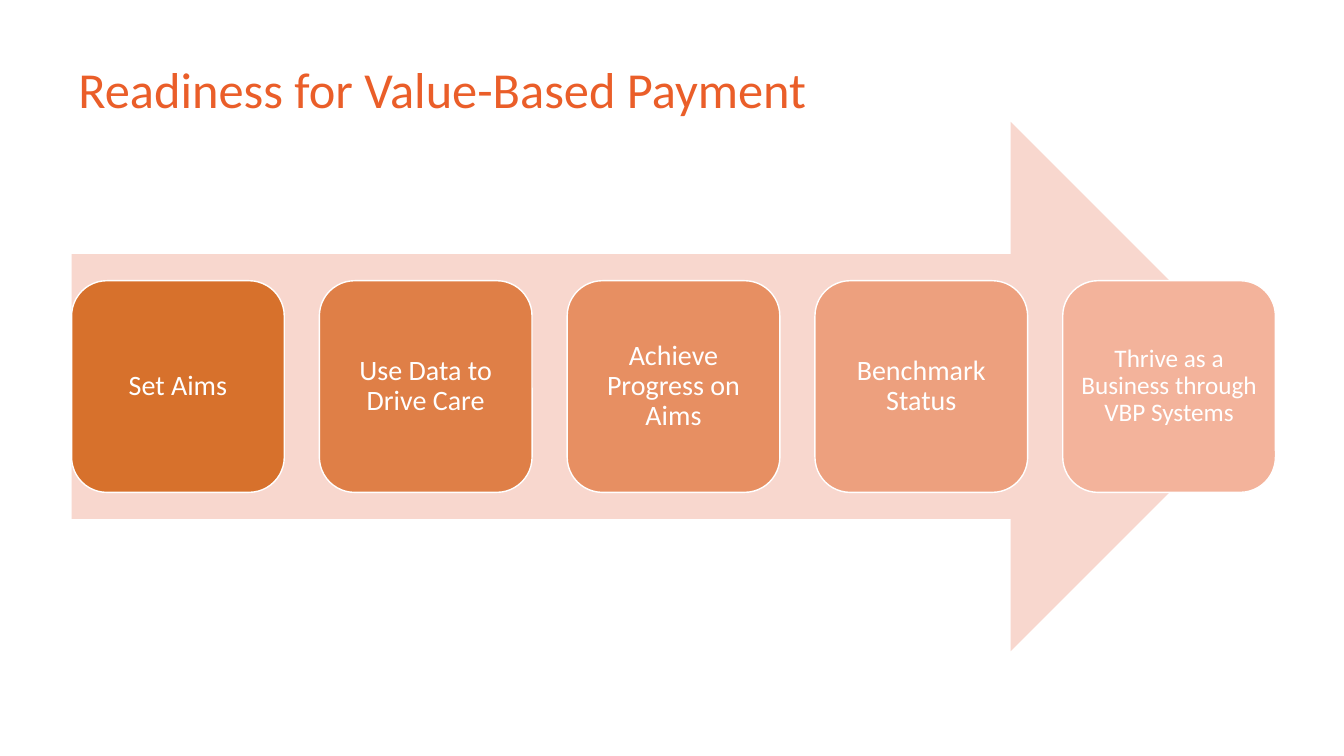
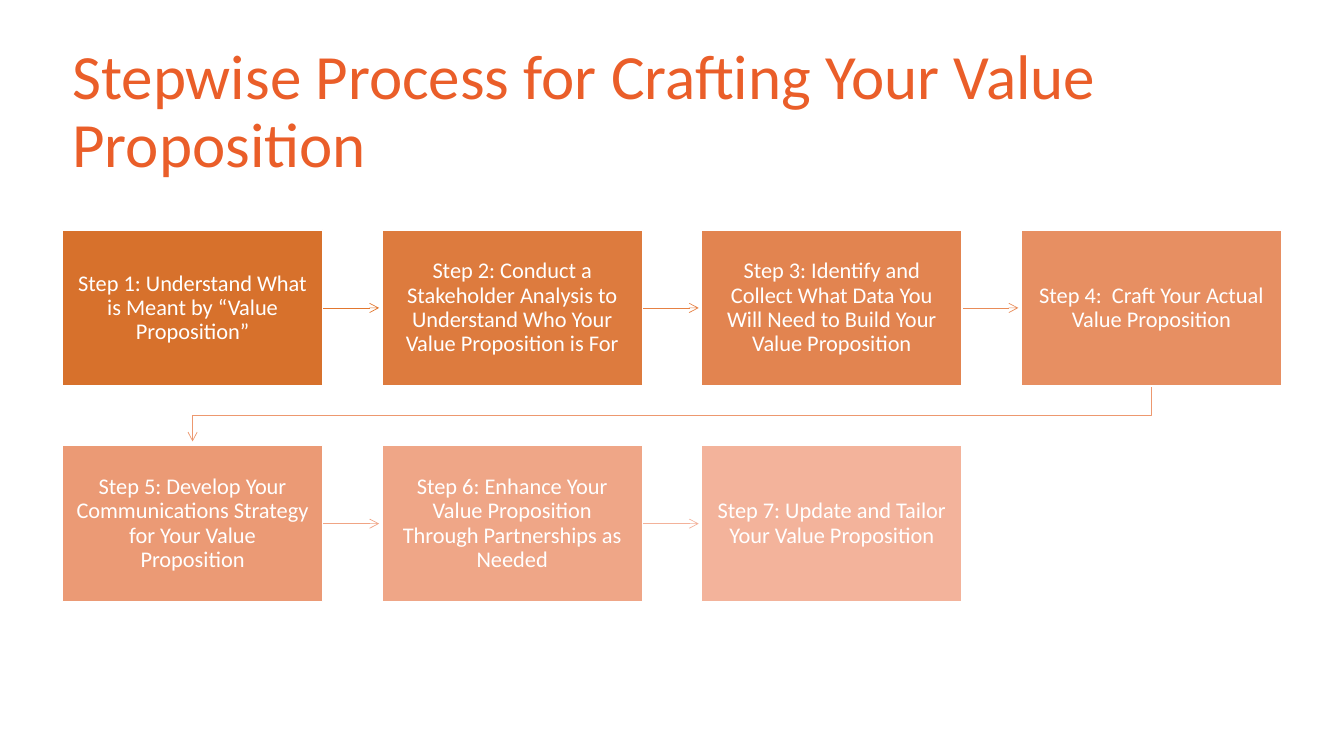
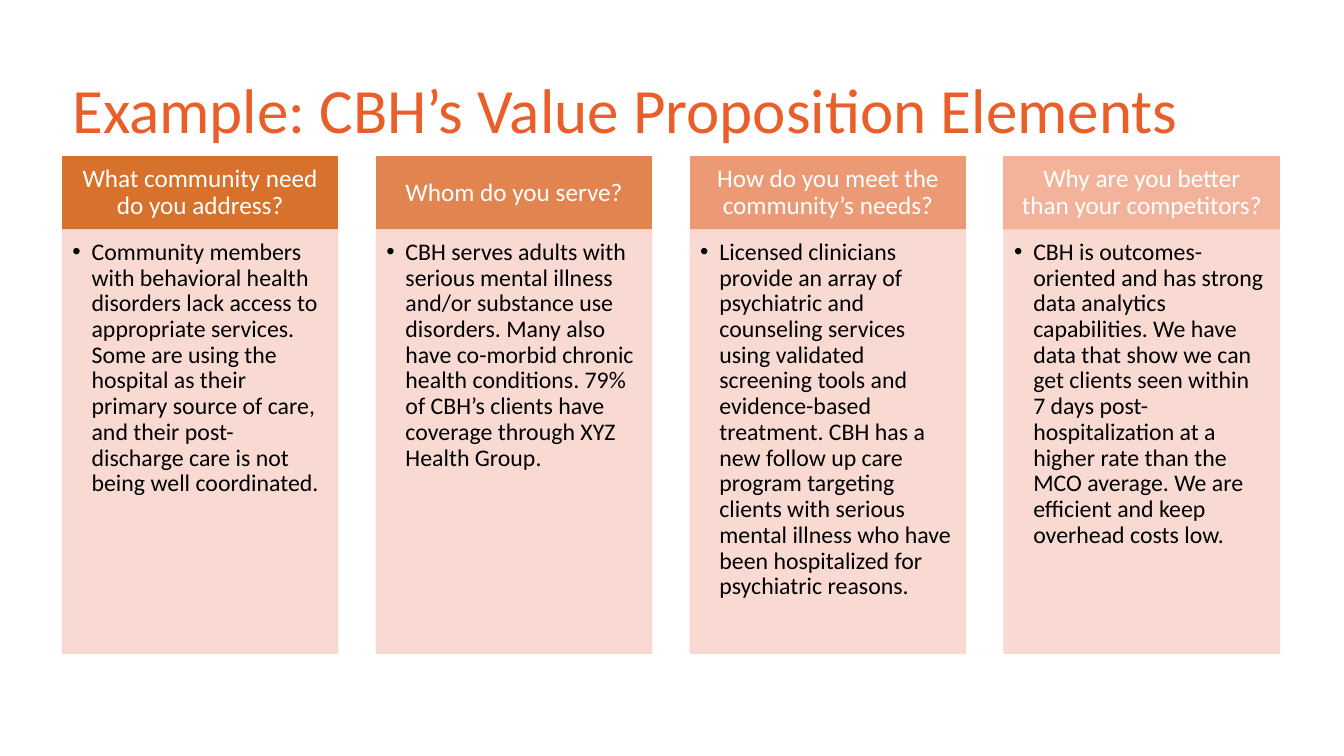
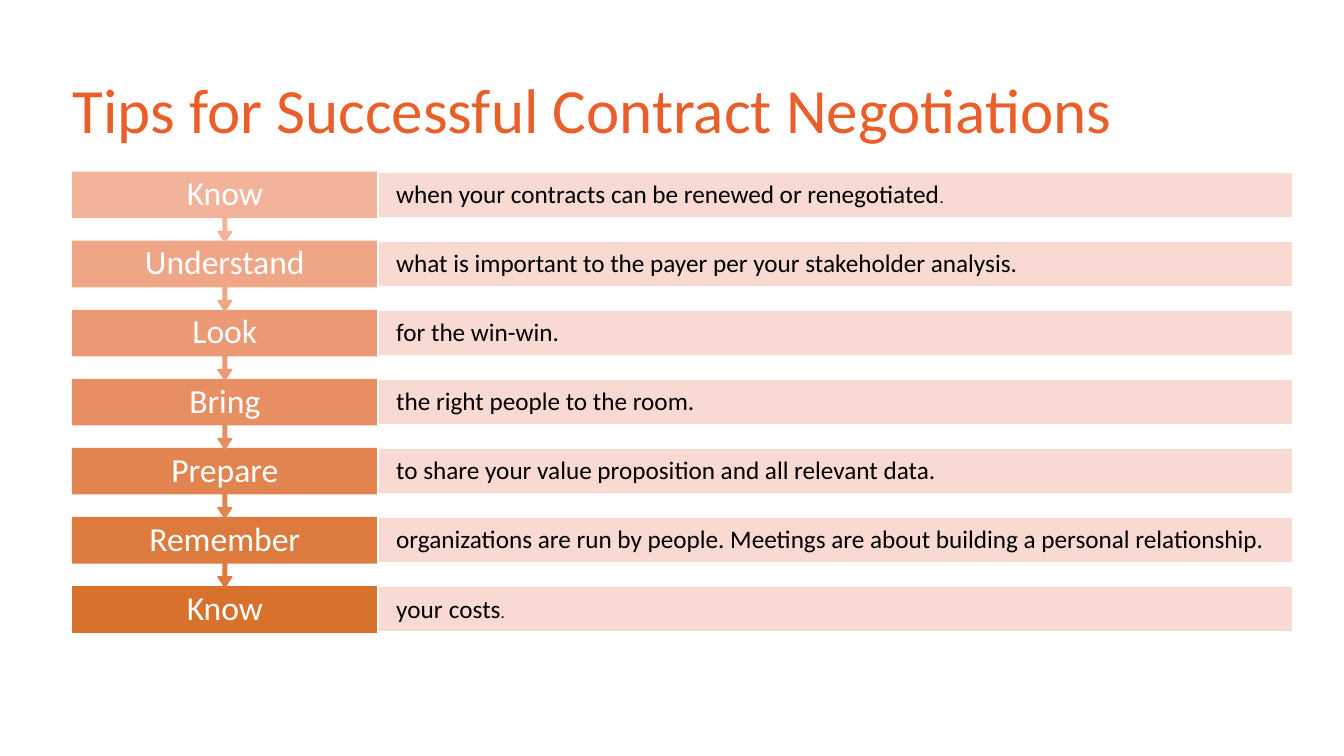
import pptx
import pptx.util
import pptx.dml.color
import pptx.enum.shapes
import pptx.enum.text
import pptx.oxml.ns
import lxml.etree

Inches = pptx.util.Inches
SHAPE = pptx.enum.shapes.MSO_SHAPE
ALIGN = pptx.enum.text.PP_ALIGN
ANCHOR = pptx.enum.text.MSO_ANCHOR

FONT = "Calibri"
COLORS = {
    "title": "EA5E29",
    "white": "FFFFFF",
    "black": "000000",
    "pale": "F8D7CE",
}
SHADES = {
    4: ["D7712C", "E28450", "EB9A75", "F3B39B"],
    5: ["D7712C", "DF7F47", "E78F62", "EDA07E", "F3B39B"],
    7: ["D7712C", "DD7B3E", "E28450", "E78F62", "EB9A75", "EFA687", "F3B39B"],
}
ARROW_SHADES = ["E2772F", "E68144", "E98C59", "ED986F", "F0A484", "F3B29A"]
TITLE_BOX = (0.62, 0.4, 12.1, 1.45)

AIMS = [
    ("Set Aims", 20, 0.08),
    ("Use Data to Drive Care", 20, 0.08),
    ("Achieve Progress on Aims", 20, 0.08),
    ("Benchmark Status", 20, 0.08),
    ("Thrive as a Business through VBP Systems", 18, 0.07),
]
STEPS = [
    "Step 1: Understand What is Meant by “Value Proposition”",
    "Step 2: Conduct a Stakeholder Analysis to Understand Who Your Value Proposition is For",
    "Step 3: Identify and Collect What Data You Will Need to Build Your Value Proposition",
    "Step 4:  Craft Your Actual Value Proposition",
    "Step 5: Develop Your Communications Strategy for Your Value Proposition",
    "Step 6: Enhance Your Value Proposition Through Partnerships as Needed",
    "Step 7: Update and Tailor Your Value Proposition",
]
ELEMENTS = [
    ("What community need do you address?",
     "Community members with behavioral health disorders lack access to appropriate services. "
     "Some are using the hospital as their primary source of care, and their post-discharge "
     "care is not being well coordinated."),
    ("Whom do you serve?",
     "CBH serves adults with serious mental illness and/or substance use disorders. Many also "
     "have co-morbid chronic health conditions. 79% of CBH’s clients have coverage through "
     "XYZ Health Group."),
    ("How do you meet the community’s needs?",
     "Licensed clinicians provide an array of psychiatric and counseling services using "
     "validated screening tools and evidence-based treatment. CBH has a new follow up care "
     "program targeting clients with serious mental illness who have been hospitalized for "
     "psychiatric reasons."),
    ("Why are you better than your competitors?",
     "CBH is outcomes-oriented and has strong data analytics capabilities. We have data that "
     "show we can get clients seen within 7 days post-hospitalization at a higher rate than "
     "the MCO average. We are efficient and keep overhead costs low."),
]
TIPS = [
    ("Know", [("when your contracts can be renewed or renegotiated", 18), (".", 12)]),
    ("Understand", "what is important to the payer per your stakeholder analysis."),
    ("Look", "for the win-win."),
    ("Bring", "the right people to the room."),
    ("Prepare", "to share your value proposition and all relevant data."),
    ("Remember", "organizations are run by people. Meetings are about building a personal relationship."),
    ("Know", [("your", 18), (" ", 20), ("costs", 18), (".", 12)]),
]


def rgb(color):
    return pptx.dml.color.RGBColor.from_string(color)


def add_child(parent, tag, **attributes):
    return lxml.etree.SubElement(parent, pptx.oxml.ns.qn(tag), **attributes)


def write(holder, text, size=18, color=COLORS["white"], align=ALIGN.CENTER,
          anchor=ANCHOR.MIDDLE, insets=(0.1, 0.05, 0.1, 0.05), bullet=False):
    frame = holder.text_frame
    frame.word_wrap = True
    frame.vertical_anchor = anchor
    (frame.margin_left, frame.margin_top,
     frame.margin_right, frame.margin_bottom) = map(Inches, insets)
    paragraph = frame.paragraphs[0]
    paragraph.alignment = align
    paragraph.line_spacing = 0.9
    if bullet:
        properties = paragraph._p.get_or_add_pPr()
        properties.set("marL", str(Inches(0.19)))
        properties.set("indent", str(Inches(-0.19)))
        add_child(properties, "a:buFont", typeface="Arial")
        add_child(properties, "a:buChar", char="•")
    for words, points in [(text, size)] if isinstance(text, str) else text:
        run = paragraph.add_run()
        run.text = words
        run.font.name = FONT
        run.font.size = pptx.util.Pt(points)
        run.font.color.rgb = rgb(color)


def add_block(slide, preset, box, fill, line=None, opacity=None):
    block = slide.shapes.add_shape(preset, *map(Inches, box))
    block.shadow.inherit = False
    block.fill.solid()
    block.fill.fore_color.rgb = rgb(fill)
    if line:
        block.line.color.rgb = rgb(line)
        block.line.width = pptx.util.Pt(1)
    else:
        block.line.fill.background()
    if opacity:
        for tint in block._element.spPr.iter(pptx.oxml.ns.qn("a:srgbClr")):
            if tint.get("val") == fill:
                add_child(tint, "a:alpha", val=str(opacity * 1000))
    return block


def add_title(slide, text, box=TITLE_BOX, size=45):
    title = slide.shapes.add_textbox(*map(Inches, box))
    write(title, text, size=size, color=COLORS["title"], align=ALIGN.LEFT)


def style_arrow(arrow, color):
    arrow.line.color.rgb = rgb(color)
    arrow.line.width = pptx.util.Pt(0.5)
    add_child(arrow.line._get_or_add_ln(), "a:tailEnd", type="arrow")


def add_step_arrow(slide, start, end, color):
    arrow = slide.shapes.add_connector(
        pptx.enum.shapes.MSO_CONNECTOR.STRAIGHT, *map(Inches, start + end))
    style_arrow(arrow, color)
    add_child(arrow._element.spPr, "a:effectLst")


def add_return_arrow(slide, start, end, turn, color):
    points = [(Inches(x), Inches(y)) for x, y in
              [start, (start[0], turn), (end[0], turn), end]]
    builder = slide.shapes.build_freeform(*points[0])
    builder.add_line_segments(points[1:], close=False)
    arrow = builder.convert_to_shape()
    arrow.fill.background()
    arrow.shadow.inherit = False
    style_arrow(arrow, color)


def add_aims(slide, box):
    left, top, width, height = box
    add_block(slide, SHAPE.RIGHT_ARROW, box, COLORS["pale"])
    card_width, card_height = 2.11, 2.1
    pitch = (width - card_width) / (len(AIMS) - 1)
    card_top = top + (height - card_height) / 2
    for index, (aim, size, inset) in enumerate(AIMS):
        card = add_block(slide, SHAPE.ROUNDED_RECTANGLE,
                         (left + index * pitch, card_top, card_width, card_height),
                         SHADES[5][index], COLORS["white"])
        write(card, aim, size=size, insets=(inset,) * 4)


def add_steps(slide, box, columns=4):
    left, top, width, height = box
    step_width, step_height = 2.58, 1.55
    pitch = (width - step_width) / (columns - 1)
    row_pitch = height - step_height
    for index, step in enumerate(STEPS):
        row, column = divmod(index, columns)
        x, y = left + column * pitch, top + row * row_pitch
        if index < len(STEPS) - 1:
            color = ARROW_SHADES[index]
            if column < columns - 1:
                middle = y + step_height / 2
                add_step_arrow(slide, (x + step_width, middle),
                               (x + pitch - 0.03, middle), color)
            else:
                bottom = y + step_height
                add_return_arrow(slide, (x + step_width / 2, bottom),
                                 (left + step_width / 2, y + row_pitch - 0.04),
                                 (bottom + y + row_pitch) / 2, color)
        card = add_block(slide, SHAPE.RECTANGLE, (x, y, step_width, step_height),
                         SHADES[7][index], COLORS["white"])
        write(card, step, size=16, insets=(0.13,) * 4)


def add_elements(slide, box):
    left, top, width, height = box
    column_width, head_height = 2.73, 0.73
    pitch = (width - column_width) / (len(ELEMENTS) - 1)
    for index, (question, answer) in enumerate(ELEMENTS):
        x = left + index * pitch
        shade = SHADES[4][index]
        head = add_block(slide, SHAPE.RECTANGLE, (x, top, column_width, head_height),
                         shade, shade)
        write(head, question, insets=(0.14, 0.08, 0.14, 0.08))
        body = add_block(slide, SHAPE.RECTANGLE,
                         (x, top + head_height, column_width, height - head_height),
                         COLORS["pale"], COLORS["pale"], opacity=90)
        write(body, answer, size=17, color=COLORS["black"], align=ALIGN.LEFT,
              anchor=ANCHOR.TOP, insets=(0.1, 0.1, 0.13, 0.15), bullet=True)


def add_tips(slide, box):
    left, top, width, height = box
    verb_width, row_height, callout_height = 3.02, 0.45, 0.69
    pitch = (height - row_height) / (len(TIPS) - 1)
    for index, (verb, advice) in reversed(list(enumerate(TIPS))):
        y = top + index * pitch
        shade = SHADES[7][-1 - index]
        last = index == len(TIPS) - 1
        label = add_block(slide, SHAPE.RECTANGLE if last else SHAPE.DOWN_ARROW_CALLOUT,
                          (left, y, verb_width, row_height if last else callout_height),
                          shade, shade)
        if not last:
            for place, value in enumerate((0.05, 0.1, 0.15, 0.65)):
                label.adjustments[place] = value
        write(label, verb, size=24, insets=(0.22, 0, 0.22, 0))
        bar = add_block(slide, SHAPE.RECTANGLE,
                        (left + verb_width + 0.01, y, width - verb_width - 0.01, row_height),
                        COLORS["pale"], COLORS["white"], opacity=90)
        write(bar, advice, color=COLORS["black"], align=ALIGN.LEFT,
              insets=(0.18, 0, 0.18, 0))


def main():
    deck = pptx.Presentation()
    deck.slide_width, deck.slide_height = Inches(13.33), Inches(7.5)
    blank = deck.slide_layouts[6]

    readiness = deck.slides.add_slide(blank)
    add_title(readiness, "Readiness for Value-Based Payment", (0.68, 0.29, 10.6, 1.25), 36)
    add_aims(readiness, (0.71, 1.21, 11.94, 5.25))

    process = deck.slides.add_slide(blank)
    add_title(process, "Stepwise Process for Crafting Your Value Proposition")
    add_steps(process, (0.62, 2.28, 12.09, 3.69))

    example = deck.slides.add_slide(blank)
    add_title(example, "Example: CBH’s Value Proposition Elements")
    add_elements(example, (0.62, 1.55, 12.07, 4.93))

    negotiation = deck.slides.add_slide(blank)
    add_title(negotiation, "Tips for Successful Contract Negotiations")
    add_tips(negotiation, (0.72, 1.71, 12.1, 4.56))

    deck.save("out.pptx")


if __name__ == "__main__":
    main()
